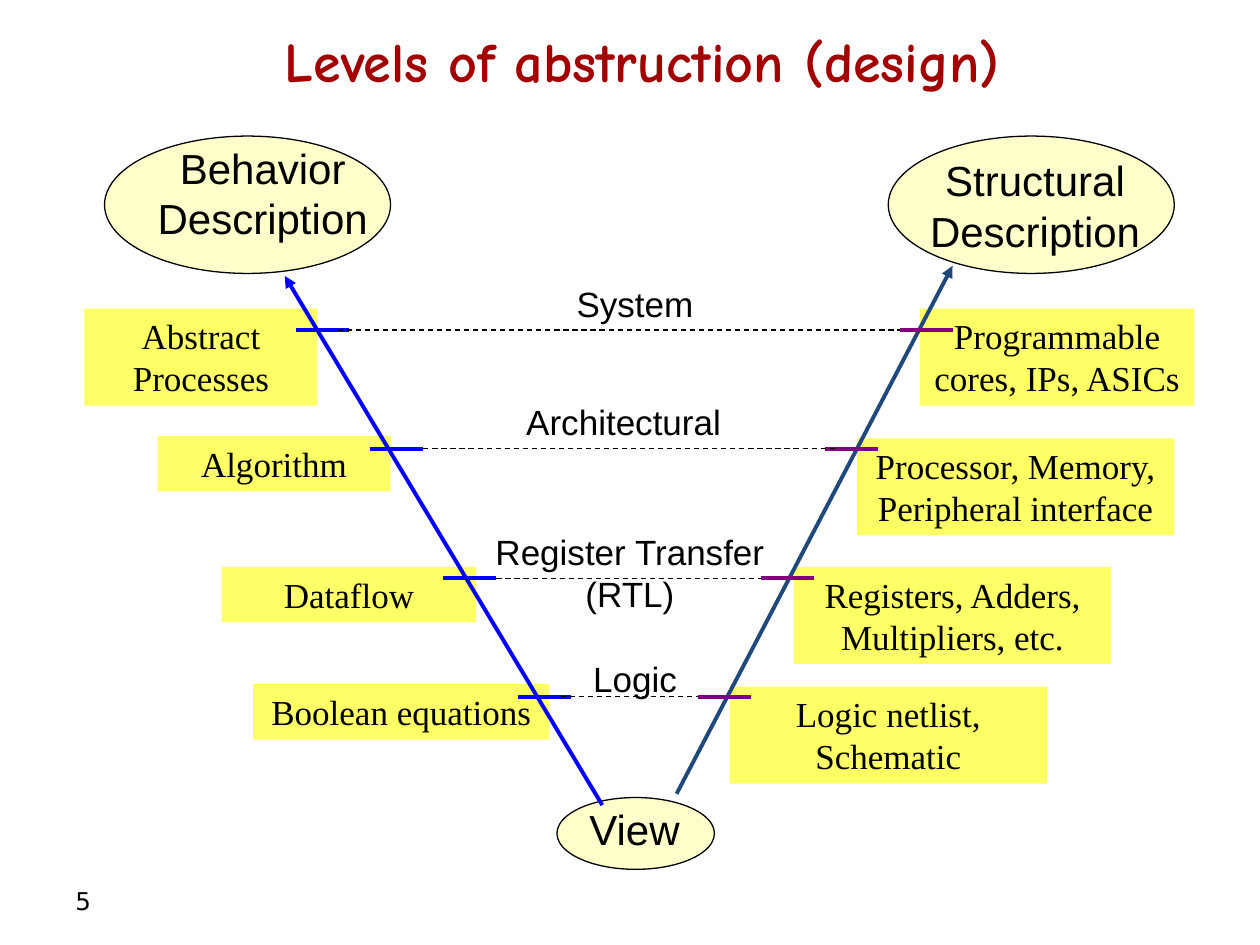
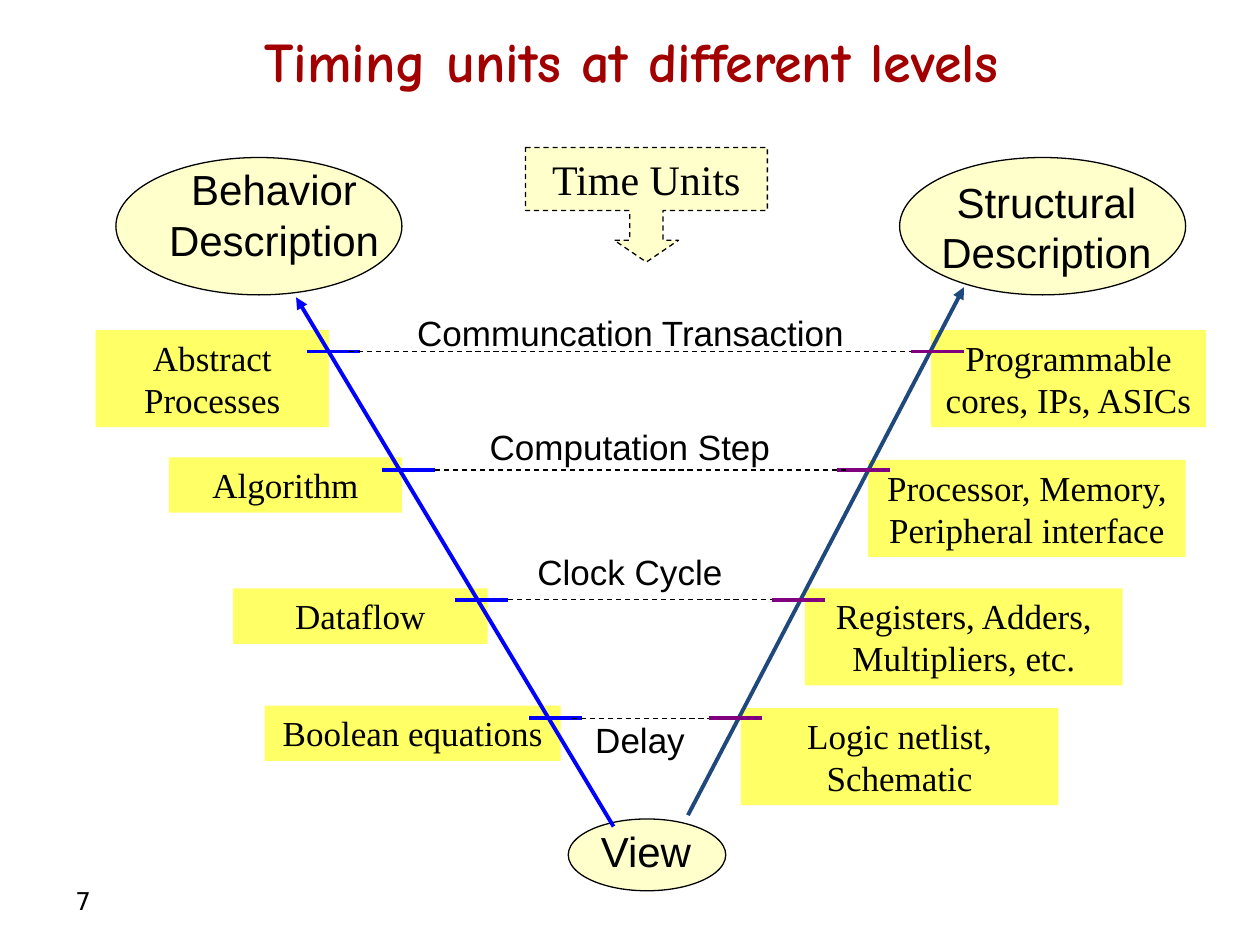
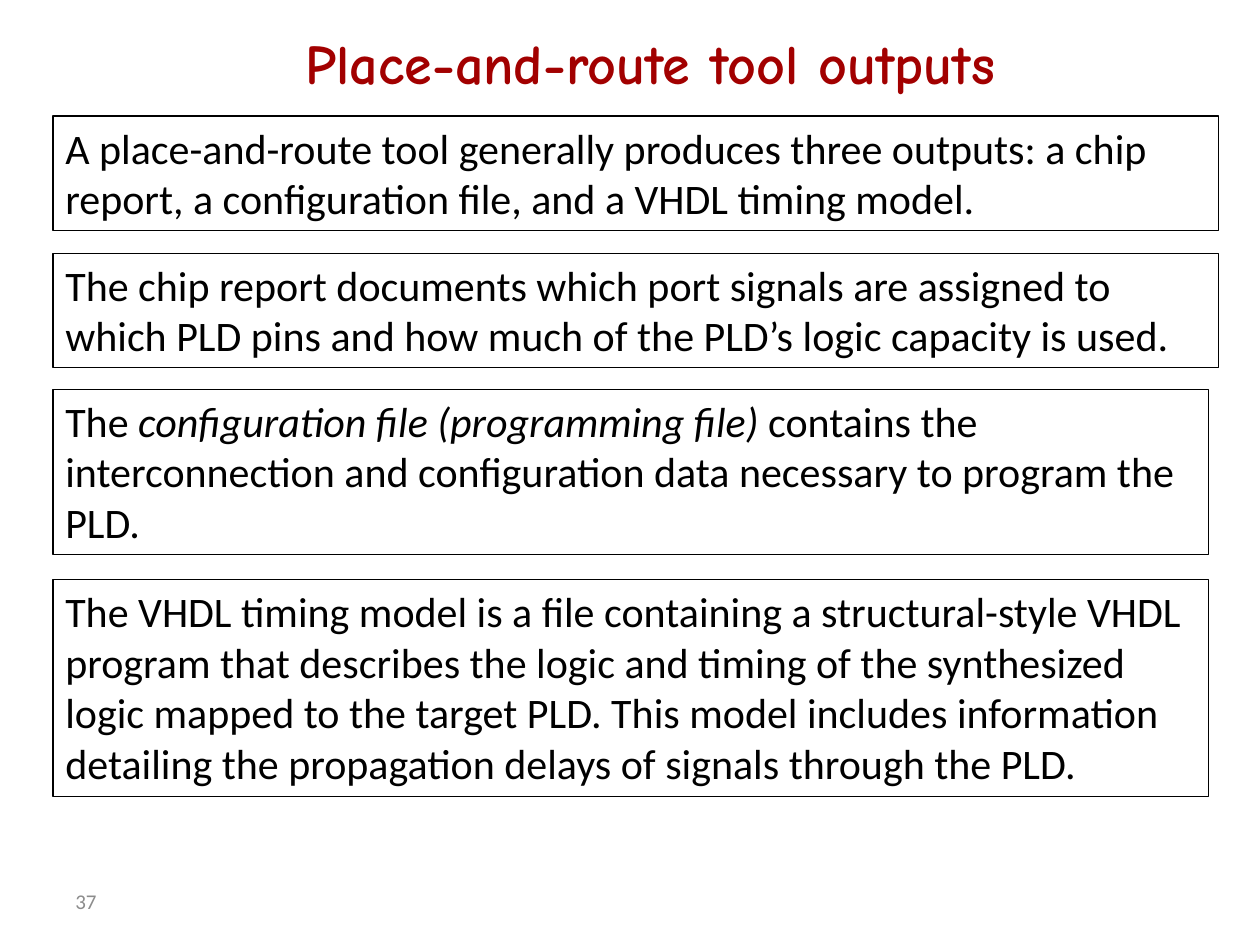
from dataclasses import dataclass

from lxml import etree
from pptx import Presentation
from pptx.dml.color import RGBColor
from pptx.enum.dml import MSO_LINE
from pptx.enum.shapes import MSO_CONNECTOR, MSO_SHAPE
from pptx.enum.text import MSO_ANCHOR, MSO_AUTO_SIZE, PP_ALIGN
from pptx.oxml.ns import qn
from pptx.util import Emu, Pt

PX = 9144  # one px is a hundredth of an inch
BLANK_LAYOUT = 6

RECTANGLE, ELLIPSE = MSO_SHAPE.RECTANGLE, MSO_SHAPE.OVAL
CALLOUT = MSO_SHAPE.DOWN_ARROW_CALLOUT
STRAIGHT, DASH = MSO_CONNECTOR.STRAIGHT, MSO_LINE.DASH
LEFT, CENTER = PP_ALIGN.LEFT, PP_ALIGN.CENTER
TOP, MIDDLE = MSO_ANCHOR.TOP, MSO_ANCHOR.MIDDLE
GROW, FIXED = MSO_AUTO_SIZE.SHAPE_TO_FIT_TEXT, MSO_AUTO_SIZE.NONE

BLACK, GREY, TITLE_RED = "000000", "8C8C8C", "A20000"
YELLOW, CREAM = "FFFF66", "FFFFCC"
BLUE, NAVY, PURPLE = "0000FF", "1F497D", "800080"
THIN, THICK = 0.75, 2.25
TICK_LENGTH = 42


@dataclass(frozen=True)
class Box:
    left: int
    top: int
    width: int
    height: int

    def moved(self, dx: int, dy: int) -> "Box":
        return Box(self.left + dx, self.top + dy, self.width, self.height)


@dataclass(frozen=True)
class Style:
    font: str
    size: int
    color: str = BLACK
    bold: bool = False
    align: PP_ALIGN = CENTER
    anchor: MSO_ANCHOR = TOP
    autosize: MSO_AUTO_SIZE = GROW


@dataclass(frozen=True)
class Run:
    text: str
    italic: bool = False


@dataclass(frozen=True)
class Item:
    """A piece of text and the box it stands in."""
    box: Box
    text: str


@dataclass(frozen=True)
class Level:
    y: int
    left_tick: int
    right_tick: int
    dash_start: int
    dash_end: int
    behavior: Item
    structure: Item


@dataclass(frozen=True)
class Oval:
    box: Box
    label: Item
    align: PP_ALIGN = CENTER


@dataclass(frozen=True)
class Arrow:
    start: tuple[int, int]
    end: tuple[int, int]
    color: str


TITLE = Style("Comic Neue", 32, TITLE_RED, bold=True, anchor=MIDDLE, autosize=FIXED)
PAGE_NUMBER = Style("DejaVu Sans", 14, align=LEFT, anchor=MIDDLE, autosize=FIXED)
PALE_PAGE_NUMBER = Style("Calibri", 12, GREY, align=LEFT, anchor=MIDDLE, autosize=FIXED)
NOTE = Style("Times New Roman", 20)
CALLOUT_TEXT = Style("Times New Roman", 24, anchor=MIDDLE)
LEVEL_NAME = Style("Arial", 20)
BODY = Style("Calibri", 24, align=LEFT)

PAGE_NUMBER_BOX = Box(50, 695, 233, 40)
DIAGRAM_TITLE_BOX = Box(64, 13, 907, 70)

LEVELS = [
    Level(262, 235, 714, 268, 714,
          Item(Box(67, 245, 185, 77), "Abstract Processes"),
          Item(Box(730, 245, 218, 77), "Programmable cores, IPs, ASICs")),
    Level(356, 294, 655, 336, 663,
          Item(Box(125, 346, 185, 44), "Algorithm"),
          Item(Box(680, 348, 252, 77), "Processor, Memory, Peripheral interface")),
    Level(459, 352, 604, 394, 604,
          Item(Box(176, 450, 202, 44), "Dataflow"),
          Item(Box(630, 450, 252, 77), "Registers, Adders, Multipliers, etc.")),
    Level(553, 411, 554, 445, 554,
          Item(Box(201, 543, 235, 44), "Boolean equations"),
          Item(Box(579, 545, 252, 77), "Logic netlist, Schematic")),
]

OVALS = [
    Oval(Box(442, 633, 125, 57), Item(Box(458, 633, 117, 50), "View"), LEFT),
    Oval(Box(83, 108, 227, 109), Item(Box(75, 108, 267, 91), "Behavior Description")),
    Oval(Box(705, 108, 227, 109), Item(Box(718, 118, 207, 91), "Structural Description")),
]

ARROWS = [
    Arrow((478, 639), (226, 219), BLUE),
    Arrow((537, 630), (756, 211), NAVY),
]

ABSTRACTION_NAMES = [
    Item(Box(319, 219, 370, 44), "System"),
    Item(Box(310, 313, 370, 44), "Architectural"),
    Item(Box(378, 416, 244, 77), "Register Transfer (RTL)"),
    Item(Box(403, 517, 202, 44), "Logic"),
]

TIMING_NAMES = [
    Item(Box(317, 242, 367, 44), "Communcation Transaction"),
    Item(Box(375, 333, 250, 44), "Computation Step"),
    Item(Box(400, 432, 200, 44), "Clock Cycle"),
    Item(Box(408, 565, 200, 44), "Delay"),
]

TOOL_OUTPUTS = [
    (Box(42, 92, 925, 91), [Run(
        "A place-and-route tool generally produces three outputs: a chip report, "
        "a configuration file, and a VHDL timing model.")]),
    (Box(42, 201, 925, 91), [Run(
        "The chip report documents which port signals are assigned to which PLD pins "
        "and how much of the PLD’s logic capacity is used.")]),
    (Box(42, 309, 917, 131), [
        Run("The "),
        Run("configuration file (programming file) ", italic=True),
        Run("contains the interconnection and configuration data necessary "
            "to program the PLD.")]),
    (Box(42, 460, 917, 172), [Run(
        "The VHDL timing model is a file containing a structural-style VHDL program "
        "that describes the logic and timing of the synthesized logic mapped to the "
        "target PLD. This model includes information detailing the propagation delays "
        "of signals through the PLD.")]),
]


def px(length: int) -> Emu:
    return Emu(length * PX)


def rgb(color: str) -> RGBColor:
    return RGBColor.from_string(color)


def placed(box: Box) -> list[Emu]:
    return [px(length) for length in (box.left, box.top, box.width, box.height)]


def write(shape, runs: list[Run], style: Style) -> None:
    frame = shape.text_frame
    frame.word_wrap = True
    frame.auto_size = style.autosize
    frame.vertical_anchor = style.anchor
    paragraph = frame.paragraphs[0]
    paragraph.alignment = style.align
    for part in runs:
        run = paragraph.add_run()
        run.text = part.text
        run.font.name = style.font
        run.font.size = Pt(style.size)
        run.font.bold = style.bold
        run.font.italic = part.italic
        run.font.color.rgb = rgb(style.color)


def add_text(slide, item: Item, style: Style):
    shape = slide.shapes.add_textbox(*placed(item.box))
    write(shape, [Run(item.text)], style)
    return shape


def add_shape(slide, kind: MSO_SHAPE, box: Box, fill: str | None, outlined: bool = True):
    shape = slide.shapes.add_shape(kind, *placed(box))
    shape.shadow.inherit = False
    if fill:
        shape.fill.solid()
        shape.fill.fore_color.rgb = rgb(fill)
    else:
        shape.fill.background()
    if outlined:
        shape.line.color.rgb = rgb(BLACK)
        shape.line.width = Pt(THIN)
    else:
        shape.line.fill.background()
    return shape


def add_line(slide, start: tuple[int, int], end: tuple[int, int], color: str, width: float):
    line = slide.shapes.add_connector(STRAIGHT, *map(px, start + end))
    line.line.color.rgb = rgb(color)
    line.line.width = Pt(width)
    etree.SubElement(line._element.spPr, qn("a:effectLst"))
    return line


def add_arrow(slide, start: tuple[int, int], end: tuple[int, int], color: str) -> None:
    line = add_line(slide, start, end, color, THICK)
    etree.SubElement(line.line._get_or_add_ln(), qn("a:tailEnd"), type="triangle")


def add_slide(presentation, title: Item, right_inset: int, number: str, number_style: Style):
    """Start a slide with its title and page number."""
    slide = presentation.slides.add_slide(presentation.slide_layouts[BLANK_LAYOUT])
    add_text(slide, Item(PAGE_NUMBER_BOX, number), number_style)
    add_text(slide, title, TITLE).text_frame.margin_right = px(right_inset)
    return slide


def add_diagram(slide, dx: int = 0, dy: int = 0) -> None:
    """Draw the V of behavior and structure, moved by dx and dy."""
    def point(x: int, y: int) -> tuple[int, int]:
        return x + dx, y + dy

    for level in LEVELS:
        for note in (level.behavior, level.structure):
            shape = add_shape(slide, RECTANGLE, note.box.moved(dx, dy), YELLOW, outlined=False)
            write(shape, [Run(note.text)], NOTE)
    for oval in OVALS:
        add_shape(slide, ELLIPSE, oval.box.moved(dx, dy), CREAM)
        label = Item(oval.label.box.moved(dx, dy), oval.label.text)
        add_text(slide, label, Style("Arial", 24, align=oval.align))
    for arrow in ARROWS:
        add_arrow(slide, point(*arrow.start), point(*arrow.end), arrow.color)
    for level in LEVELS:
        for x, color in ((level.left_tick, BLUE), (level.right_tick, PURPLE)):
            add_line(slide, point(x, level.y), point(x + TICK_LENGTH, level.y), color, THICK)
        dashes = add_line(slide, point(level.dash_start, level.y),
                          point(level.dash_end, level.y), BLACK, THIN)
        dashes.line.dash_style = DASH


def add_level_names(slide, names: list[Item]) -> None:
    for name in names:
        add_text(slide, name, LEVEL_NAME)


def add_abstraction_slide(presentation) -> None:
    title = Item(DIAGRAM_TITLE_BOX, "Levels of abstruction (design)")
    slide = add_slide(presentation, title, 25, "5", PAGE_NUMBER)
    add_diagram(slide)
    add_level_names(slide, ABSTRACTION_NAMES)


def add_timing_slide(presentation) -> None:
    title = Item(DIAGRAM_TITLE_BOX, "Timing units at different levels")
    slide = add_slide(presentation, title, 42, "7", PAGE_NUMBER)
    add_diagram(slide, dx=9, dy=17)
    callout = add_shape(slide, CALLOUT, Box(417, 117, 192, 91), CREAM)
    for index, value in enumerate((0.29, 0.28, 0.19, 0.55)):
        callout.adjustments[index] = value
    callout.line.dash_style = DASH
    write(callout, [Run("Time Units")], CALLOUT_TEXT)
    add_level_names(slide, TIMING_NAMES)


def add_outputs_slide(presentation) -> None:
    title = Item(Box(46, 14, 941, 70), "Place-and-route tool outputs")
    slide = add_slide(presentation, title, 10, "37", PALE_PAGE_NUMBER)
    for box, runs in TOOL_OUTPUTS:
        write(add_shape(slide, RECTANGLE, box, None), runs, BODY)


def main() -> None:
    presentation = Presentation()
    presentation.slide_width, presentation.slide_height = px(1000), px(750)
    add_abstraction_slide(presentation)
    add_timing_slide(presentation)
    add_outputs_slide(presentation)
    presentation.save("out.pptx")


if __name__ == "__main__":
    main()
